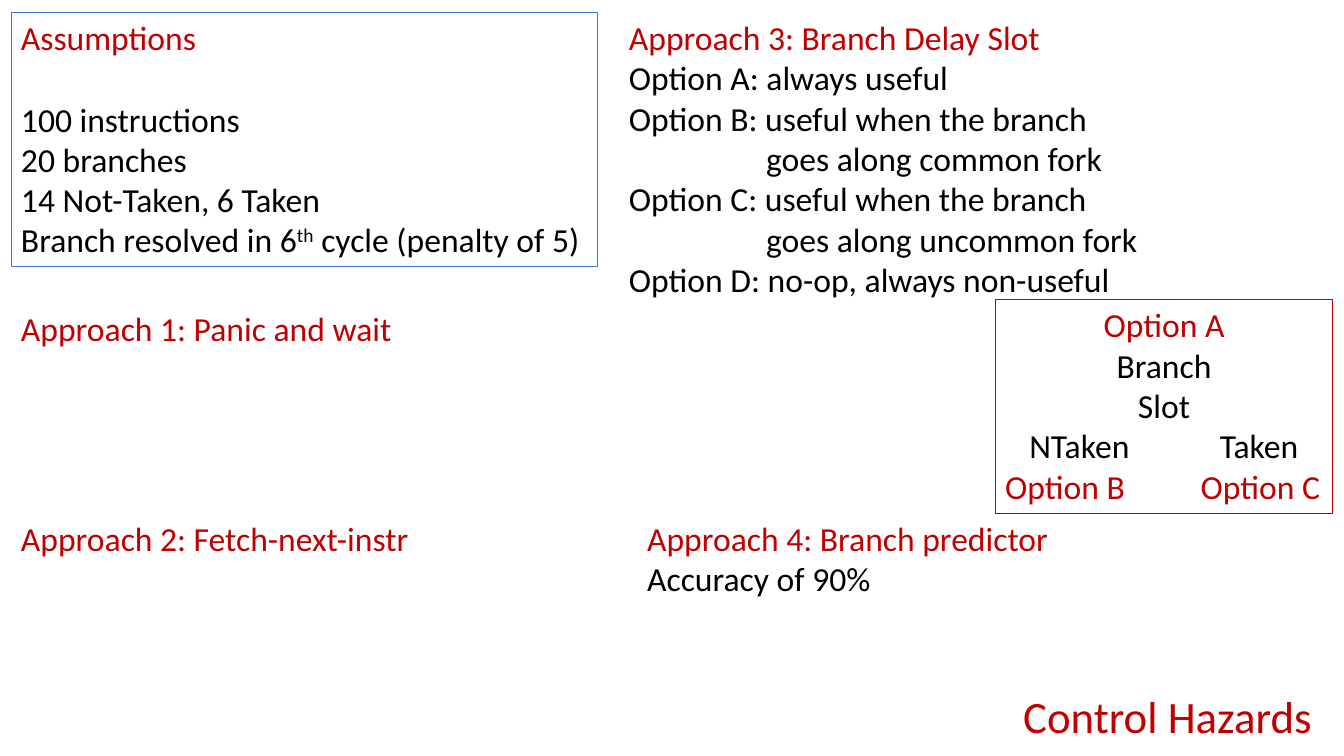
import pptx
import pptx.util
import pptx.dml.color
import pptx.enum.shapes
import pptx.enum.text
import lxml.etree

COLORS = {"red": "C00000", "blue": "4472C4", "black": "000000"}
FONT, BODY, TITLE = "Calibri", 24, 32
SLIDE_W, SLIDE_H = 13.33, 7.5

# Grid lines in inches
COLS = {"left": 0.11, "right": 6.14, "predictor": 6.32, "fork": 9.87, "title": 10.05}
ROWS = {"top": 0.12, "fork": 2.97, "middle": 3.01, "lower": 5.09, "title": 6.78}
LINE_H, PADDING = 0.404, 0.1  # height of a text line, top and bottom insets together

HANG = {"indent": 1.36}
RED = {"color": "red"}

# column, row, width, rows of text, border, lines of (text, format)
BLOCKS = [
    ("left", "top", 5.82, 6, "blue", [
        ("Assumptions", RED),
        ("100 instructions", {"before": 29.3}),
        ("20 branches", {}),
        ("14 Not-Taken, 6 Taken", {}),
        (("Branch resolved in 6", "th", " cycle (penalty of 5)"), {}),
    ]),
    ("left", "middle", 3.91, 2, None, [("Approach 1: Panic and wait", RED)]),
    ("left", "lower", 4.09, 2, None, [("Approach 2: Fetch-next-instr", RED)]),
    ("right", "top", 5.27, 7, None, [
        ("Approach 3: Branch Delay Slot", RED),
        ("Option A: always useful", {}),
        ("Option B: useful when the branch", {}),
        ("goes along common fork", HANG),
        ("Option C: useful when the branch", {}),
        ("goes along uncommon fork", HANG),
        ("Option D: no-op, always non-useful", {}),
    ]),
    ("predictor", "lower", 4.21, 2, None, [
        ("Approach 4: Branch predictor", RED),
        ("Accuracy of 90%", {}),
    ]),
    ("fork", "fork", 3.35, 5, "red", [
        ("Option A", {"color": "red", "align": "CENTER"}),
        ("Branch", {"align": "CENTER"}),
        ("Slot", {"align": "CENTER"}),
        ("\tNTaken\tTaken", {"tabs": (0.24, 2.13)}),
        ("Option B\tOption C", {"color": "red", "tabs": (1.94,)}),
    ]),
    ("title", "title", 3.1, 1, None, [("Control Hazards", {"color": "red", "size": TITLE})]),
]


def rgb(name):
    return pptx.dml.color.RGBColor.from_string(COLORS[name])


def write(p, text, color="black", size=BODY, align="LEFT", before=0, indent=0, tabs=()):
    """Fill a paragraph; in a tuple of texts every second one is superscript."""
    p.alignment = getattr(pptx.enum.text.PP_ALIGN, align)
    p.space_before = pptx.util.Pt(before)
    pPr = p._p.get_or_add_pPr()
    if indent:
        pPr.set("marL", str(pptx.util.Inches(indent)))
    if tabs:
        ns = "{http://schemas.openxmlformats.org/drawingml/2006/main}"
        stops = lxml.etree.SubElement(pPr, ns + "tabLst")
        for pos in tabs:
            lxml.etree.SubElement(stops, ns + "tab", pos=str(pptx.util.Inches(pos)), algn="l")
    for i, part in enumerate((text,) if isinstance(text, str) else text):
        r = p.add_run()
        r.text = part
        r.font.name, r.font.size = FONT, pptx.util.Pt(size)
        r.font.color.rgb = rgb(color)
        if i % 2:
            r.font._element.set("baseline", "30000")


def add_block(slide, col, row, width, rows, border, lines):
    size = lines[0][1].get("size", BODY)
    height = PADDING + rows * LINE_H * size / BODY
    box = [pptx.util.Inches(v) for v in (COLS[col], ROWS[row], width, height)]
    if border:
        sp = slide.shapes.add_shape(pptx.enum.shapes.MSO_SHAPE.RECTANGLE, *box)
        sp.shadow.inherit = False
        sp.fill.background()
        sp.line.color.rgb = rgb(border)
        sp.line.width = pptx.util.Pt(0.75)
    else:
        sp = slide.shapes.add_textbox(*box)
    tf = sp.text_frame
    tf.word_wrap = True
    tf.vertical_anchor = pptx.enum.text.MSO_ANCHOR.TOP
    for i, (text, fmt) in enumerate(lines):
        write(tf.add_paragraph() if i else tf.paragraphs[0], text, **fmt)


def main():
    prs = pptx.Presentation()
    prs.slide_width = pptx.util.Inches(SLIDE_W)
    prs.slide_height = pptx.util.Inches(SLIDE_H)
    slide = prs.slides.add_slide(prs.slide_layouts[6])
    for block in BLOCKS:
        add_block(slide, *block)
    prs.save("out.pptx")


if __name__ == "__main__":
    main()
